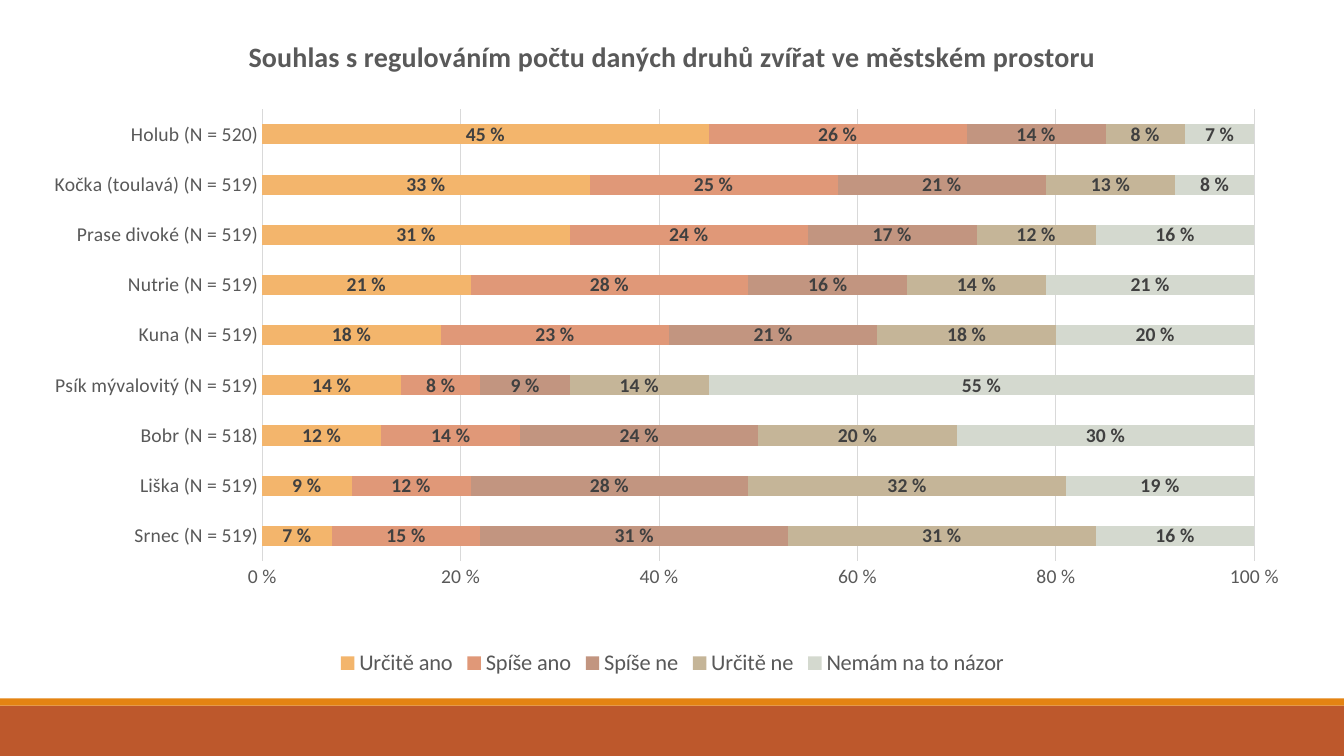
from lxml import etree
from pptx import Presentation
from pptx.chart import data
from pptx.dml import color
from pptx.enum import chart as kinds, shapes
from pptx.oxml import ns
from pptx import util as u

THEME = {
    "title": {"size": 20, "bold": True, "color": "595959"},
    "axis": {"size": 14, "bold": False, "color": "595959"},
    "legend": {"size": 16, "bold": False, "color": "595959"},
    "label": {"size": 14, "bold": True, "color": "404040"},
    "grid": "D9D9D9",
    "font": "Calibri",
    "percent": "0\\ %",
}
WIDTH, HEIGHT = u.Inches(13.33), u.Inches(7.5)


def set_font(font, role):
    look = THEME[role]
    for name, value in {"name": THEME["font"], "size": u.Pt(look["size"]), "bold": look["bold"]}.items():
        setattr(font, name, value)
    font.color.rgb = color.RGBColor.from_string(look["color"])


def set_fill(fill, tone):
    fill.solid()
    fill.fore_color.rgb = color.RGBColor.from_string(tone)


deck = Presentation()
deck.slide_width, deck.slide_height = WIDTH, HEIGHT
page = deck.slides.add_slide(deck.slide_layouts[6])

for top, depth, tone in [(7, 0.5, "BD582C"), (6.93, 0.07, "E48312")]:
    band = page.shapes.add_shape(shapes.MSO_SHAPE.RECTANGLE, 0, u.Inches(top), WIDTH, u.Inches(depth))
    band.shadow.inherit = False
    set_fill(band.fill, tone)
    band.line.fill.background()

answers = [
    ("Určitě ano", "F3B56C"),
    ("Spíše ano", "E09878"),
    ("Spíše ne", "C29580"),
    ("Určitě ne", "C5B598"),
    ("Nemám na to názor", "D4D9CF"),
]
animals = [
    ("Srnec (N = 519)", [7, 15, 31, 31, 16]),
    ("Liška (N = 519)", [9, 12, 28, 32, 19]),
    ("Bobr (N = 518)", [12, 14, 24, 20, 30]),
    ("Psík mývalovitý (N = 519)", [14, 8, 9, 14, 55]),
    ("Kuna (N = 519)", [18, 23, 21, 18, 20]),
    ("Nutrie (N = 519)", [21, 28, 16, 14, 21]),
    ("Prase divoké (N = 519)", [31, 24, 17, 12, 16]),
    ("Kočka (toulavá) (N = 519)", [33, 25, 21, 13, 8]),
    ("Holub (N = 520)", [45, 26, 14, 8, 7]),
]

survey = data.CategoryChartData(number_format=THEME["percent"])
survey.categories = [animal for animal, shares in animals]
for column, (answer, tone) in enumerate(answers):
    survey.add_series(answer, [shares[column] / 100 for animal, shares in animals])

chart = page.shapes.add_chart(
    kinds.XL_CHART_TYPE.BAR_STACKED_100,
    u.Inches(0.41), u.Inches(0.13), u.Inches(12.52), u.Inches(6.63), survey,
).chart
set_font(chart.font, "axis")

chart.has_title = True
heading = chart.chart_title.text_frame.paragraphs[0].add_run()
heading.text = "Souhlas s regulováním počtu daných druhů zvířat ve městském prostoru"
set_font(heading.font, "title")

chart.has_legend = True
chart.legend.position = kinds.XL_LEGEND_POSITION.BOTTOM
chart.legend.include_in_layout = False
set_font(chart.legend.font, "legend")

for axis in (chart.category_axis, chart.value_axis):
    axis.major_tick_mark = kinds.XL_TICK_MARK.NONE
    axis.minor_tick_mark = kinds.XL_TICK_MARK.NONE
    axis.format.line.fill.background()
    set_font(axis.tick_labels.font, "axis")

scale = chart.value_axis
scale.major_unit = 0.2
scale.tick_labels.number_format = THEME["percent"]
scale.tick_labels.number_format_is_linked = False
scale.has_major_gridlines = True
set_fill(scale.major_gridlines.format.line.fill, THEME["grid"])
scale.major_gridlines.format.line.width = u.Pt(0.75)

bars = chart.plots[0]
bars.gap_width, bars.overlap = 150, 100
bars.vary_by_categories = False
for series, (answer, tone) in zip(bars.series, answers):
    set_fill(series.format.fill, tone)
    label_format = {
        "show_value": True,
        "position": kinds.XL_LABEL_POSITION.CENTER,
        "number_format": THEME["percent"],
        "number_format_is_linked": False,
    }
    for name, value in label_format.items():
        setattr(series.data_labels, name, value)
    set_font(series.data_labels.font, "label")

plot_area = chart.element.find(".//" + ns.qn("c:plotArea"))
for old in plot_area.findall(ns.qn("c:layout")):
    plot_area.remove(old)
layout = etree.Element(ns.qn("c:layout"))
manual = etree.SubElement(layout, ns.qn("c:manualLayout"))
placement = {
    "layoutTarget": "inner", "xMode": "edge", "yMode": "edge",
    "x": 0.175, "y": 0.144, "w": 0.786, "h": 0.676,
}
for name, value in placement.items():
    etree.SubElement(manual, ns.qn("c:" + name)).set("val", str(value))
plot_area.insert(0, layout)

deck.save("out.pptx")
